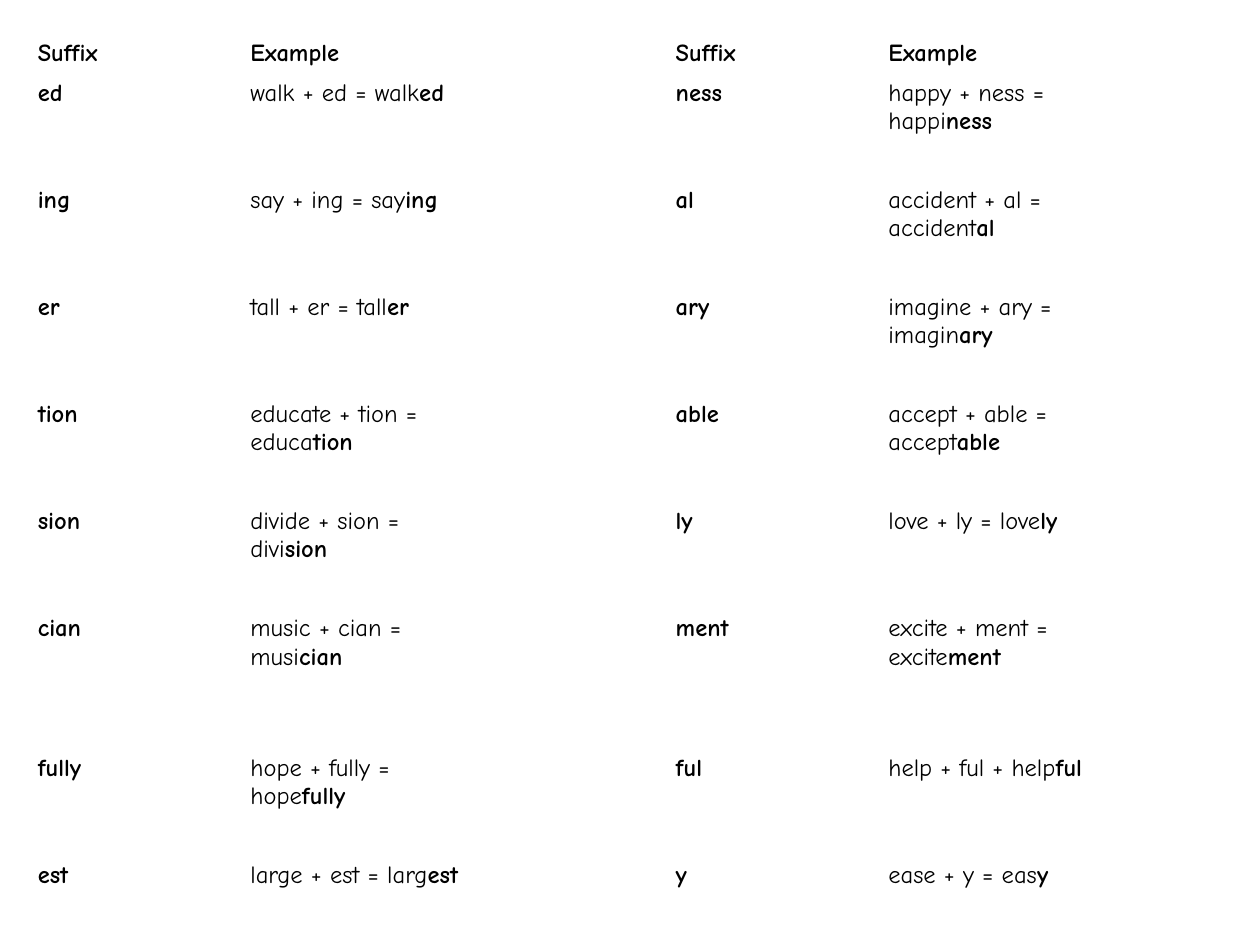
from lxml import etree
from pptx import Presentation
from pptx.dml.color import RGBColor
from pptx.oxml import ns
from pptx.util import Inches, Pt

BLACK = RGBColor(0, 0, 0)
FONT = "Comic Neue"
SIZE = 14
PAD = Inches(0.02)
HEADS = ("Suffix", "Example")
LEFT = [
    ("walk + ed = walk", "ed"),
    ("say + ing = say", "ing"),
    ("tall + er = tall", "er"),
    ("educate + tion = educa", "tion"),
    ("divide + sion = divi", "sion"),
    ("music + cian = musi", "cian"),
    ("hope + fully = hope", "fully"),
    ("large + est = larg", "est"),
]
RIGHT = [
    ("happy + ness = happi", "ness"),
    ("accident + al = accident", "al"),
    ("imagine + ary = imagin", "ary"),
    ("accept + able = accept", "able"),
    ("love + ly = love", "ly"),
    ("excite + ment = excite", "ment"),
    ("help + ful + help", "ful"),
    ("ease + y = eas", "y"),
]
ROWS = [0.32] + [0.85] * 5 + [1.11, 0.85, 0.58]


def write(cell, text, size=SIZE, bold=True, color=BLACK):
    """Add one formatted run to the cell."""
    run = cell.text_frame.paragraphs[0].add_run()
    run.text = text
    font = run.font
    font.name, font.size, font.bold = FONT, Pt(size), bold
    font.color.rgb = color


def clear(cell):
    """Strip the fill, tighten the margins and set the empty text size."""
    cell.fill.background()
    cell.margin_left = cell.margin_right = PAD
    cell.margin_top = cell.margin_bottom = PAD
    para = cell.text_frame.paragraphs[0]._p
    etree.SubElement(para, ns.qn("a:endParaRPr"), sz=str(SIZE * 100))


def fill_pair(table, col, words):
    """Fill a suffix column and the example column beside it."""
    for step, head in enumerate(HEADS):
        write(table.cell(0, col + step), head)
    for row, (stem, end) in enumerate(words, 1):
        write(table.cell(row, col), end)
        sample = table.cell(row, col + 1)
        write(sample, stem, bold=False)
        write(sample, end)


def add_grid(slide, left, top, width):
    """Place the table of suffixes with an empty column in the middle."""
    high = Inches(sum(ROWS))
    table = slide.shapes.add_table(len(ROWS), 5, left, top, width, high).table
    table.first_row = table.horz_banding = False
    for row, size in zip(table.rows, ROWS):
        row.height = Inches(size)
    for cell in table.iter_cells():
        clear(cell)
    fill_pair(table, 0, LEFT)
    fill_pair(table, 3, RIGHT)


def main():
    """Build and save the slide."""
    deck = Presentation()
    deck.slide_width, deck.slide_height = Inches(10), Inches(7.5)
    slide = deck.slides.add_slide(deck.slide_layouts[6])
    add_grid(slide, Inches(0.28), Inches(0.29), Inches(8.44))
    deck.save("out.pptx")


if __name__ == "__main__":
    main()
